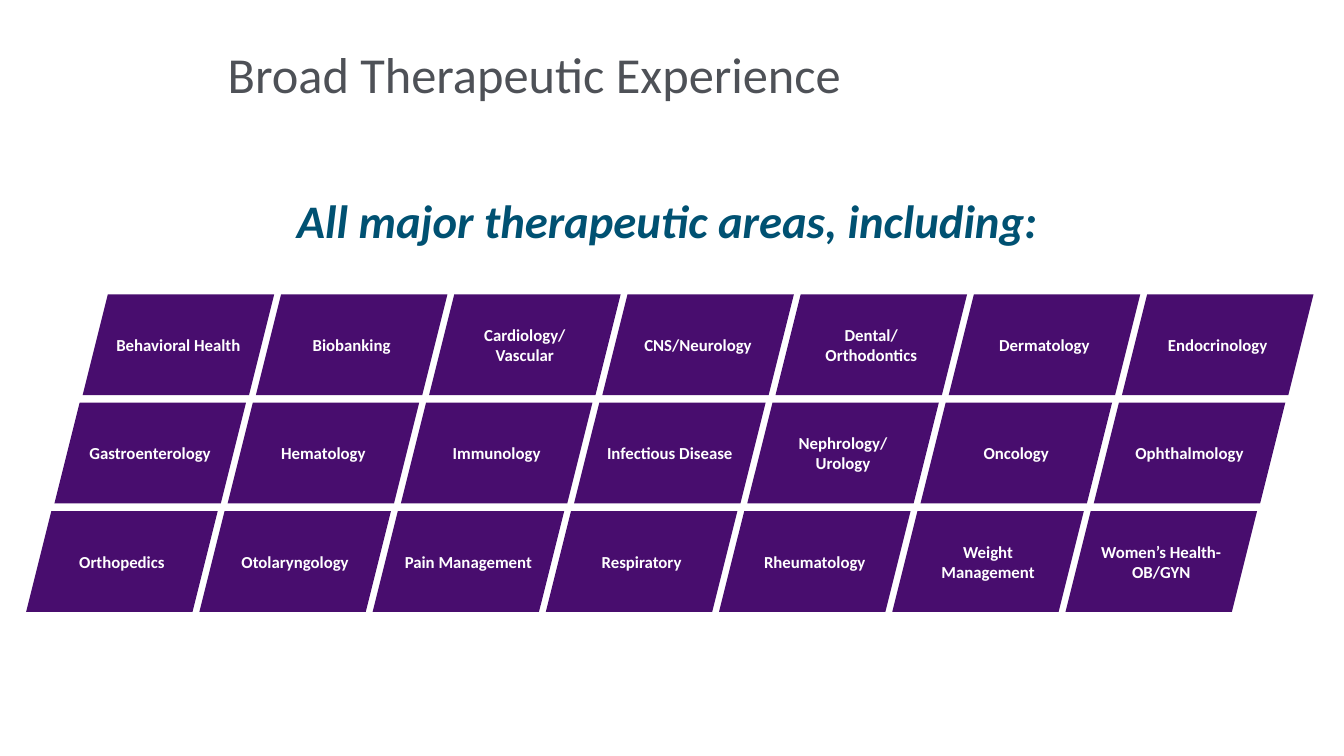
from dataclasses import dataclass

from pptx import Presentation
from pptx.dml.color import RGBColor
from pptx.enum.shapes import MSO_SHAPE as Shape
from pptx.enum.text import MSO_ANCHOR as Anchor, PP_ALIGN as Align
from pptx.slide import Slide
from pptx.text.text import TextFrame
from pptx.util import Inches, Pt

CELL = 0.1
FACE = "Calibri"
PURPLE = "480D6E"
LEFT, TOP = 8.2, 29.2
WIDE, HIGH = 19, 10
COL_STEP, ROW_STEP = 17.18, 10.75
SLANT = 2.8

AREAS = [
    ["Behavioral Health", "Biobanking", "Cardiology/\vVascular", "CNS/Neurology",
     "Dental/\vOrthodontics", "Dermatology", "Endocrinology"],
    ["Gastroenterology", "Hematology", "Immunology", "Infectious Disease",
     "Nephrology/\vUrology", "Oncology", "Ophthalmology"],
    ["Orthopedics", "Otolaryngology", "Pain Management", "Respiratory",
     "Rheumatology", "Weight Management", "Women’s Health-OB/GYN"],
]


@dataclass
class Box:
    col: float
    row: float
    cols: float
    rows: float

    def place(self) -> list[int]:
        return [Inches(n * CELL) for n in (self.col, self.row, self.cols, self.rows)]


@dataclass
class Style:
    size: float
    color: str
    align: Align
    anchor: Anchor
    bold: bool = False
    slope: bool = False
    lead: float | None = None
    left: float = 0
    side: float = 0


TITLE = Style(36, "4E5157", Align.LEFT, Anchor.MIDDLE, lead=36, left=1, side=1)
HEAD = Style(33.3, "005172", Align.CENTER, Anchor.TOP, True, True, side=1)
LABEL = Style(12, "FFFFFF", Align.CENTER, Anchor.MIDDLE, True)


def paint(code: str) -> RGBColor:
    return RGBColor.from_string(code)


def write(frame: TextFrame, text: str, style: Style) -> None:
    frame.word_wrap = True
    frame.vertical_anchor = style.anchor
    frame.margin_left = Inches(style.left * CELL)
    frame.margin_right = Inches(style.side * CELL)
    frame.margin_top = frame.margin_bottom = Inches(0.05)
    para = frame.paragraphs[0]
    para.text = text
    para.alignment = style.align
    if style.lead:
        para.line_spacing = Pt(style.lead)
    font = para.font
    font.name, font.size = FACE, Pt(style.size)
    font.bold, font.italic = style.bold, style.slope
    font.color.rgb = paint(style.color)


def add_text(slide: Slide, box: Box, text: str, style: Style) -> None:
    write(slide.shapes.add_textbox(*box.place()).text_frame, text, style)


def add_tile(slide: Slide, box: Box, text: str) -> None:
    tile = slide.shapes.add_shape(Shape.PARALLELOGRAM, *box.place())
    tile.shadow.inherit = False
    tile.fill.solid()
    tile.fill.fore_color.rgb = paint(PURPLE)
    tile.line.fill.background()
    write(tile.text_frame, text, LABEL)


def main() -> None:
    deck = Presentation()
    deck.slide_width, deck.slide_height = Inches(13.33), Inches(7.5)
    slide = deck.slides.add_slide(deck.slide_layouts[6])
    for row, names in enumerate(AREAS):
        for col, name in enumerate(names):
            left = LEFT + col * COL_STEP - row * SLANT
            add_tile(slide, Box(left, TOP + row * ROW_STEP, WIDE, HIGH), name)
    add_text(slide, Box(21.6, 3.3, 105, 8.9), "Broad Therapeutic Experience", TITLE)
    add_text(slide, Box(28.8, 18.5, 75.8, 7.4),
             "All major therapeutic areas, including:", HEAD)
    deck.save("out.pptx")


if __name__ == "__main__":
    main()
